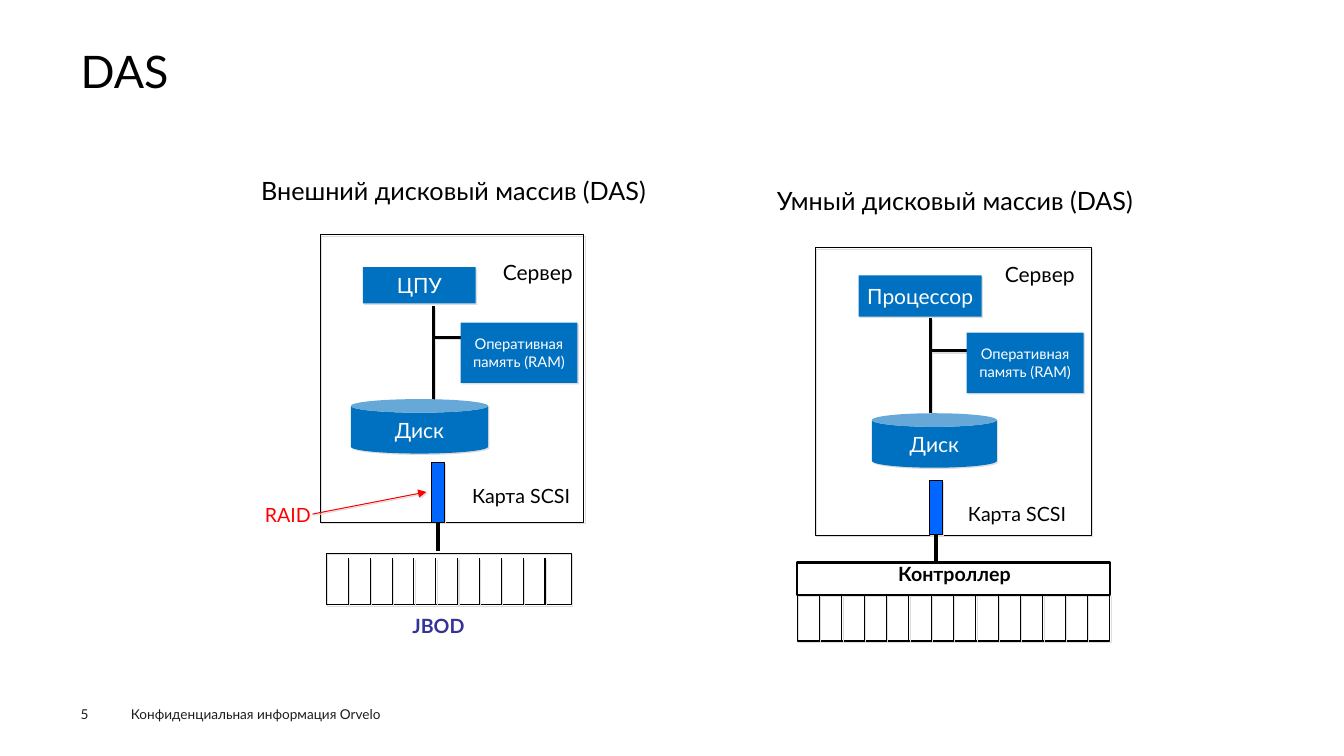
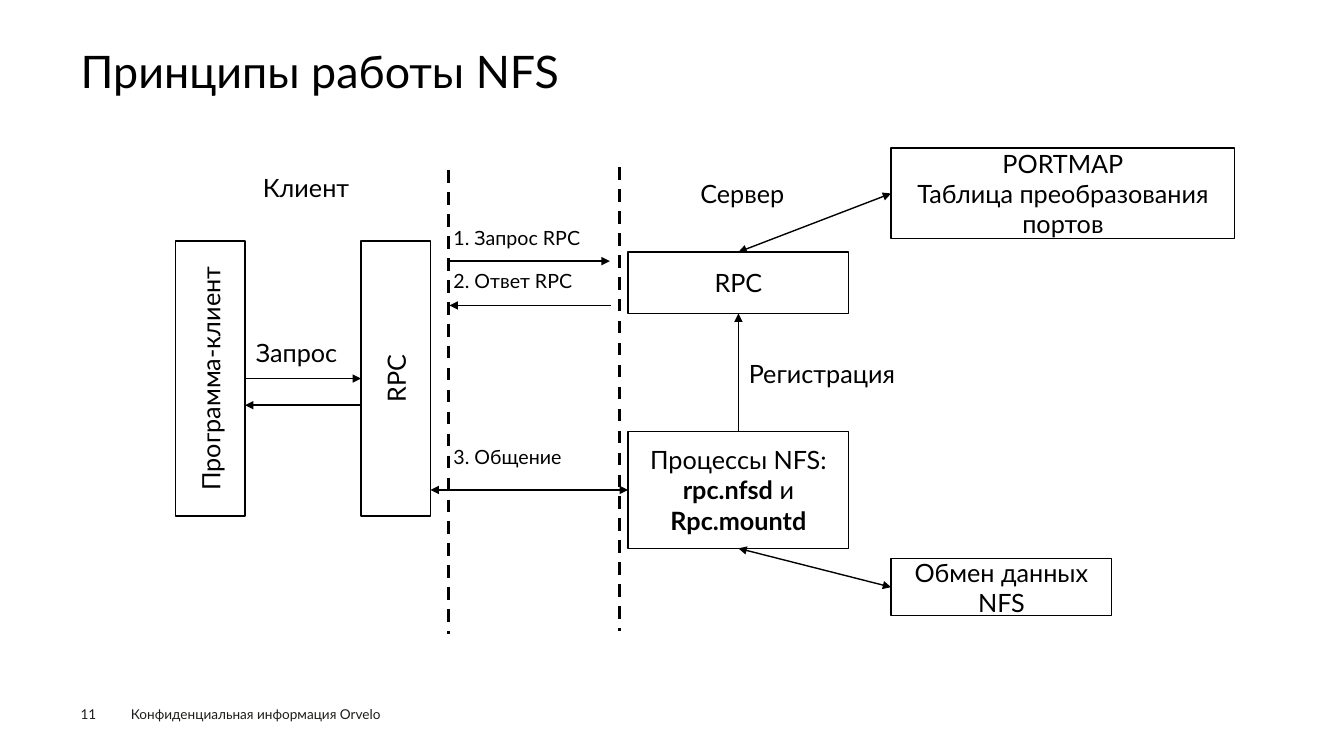
from lxml.etree import SubElement as Sub
from pptx import Presentation
from pptx.dml.color import RGBColor as Rgb
from pptx.enum.dml import MSO_LINE as Dash
from pptx.enum.shapes import MSO_CONNECTOR as Link, MSO_SHAPE as Kind
from pptx.enum.text import MSO_ANCHOR as Anchor, PP_ALIGN as Align
from pptx.oxml.ns import qn
from pptx.util import Pt

BLACK, WHITE, RED = "000000", "FFFFFF", "FF0000"
BLUE, BRIGHT, NAVY = "0070C0", "0066FF", "333399"
INK, GREY = "1D1D1B", "DDDDDD"
TOP, LEFT, BOTTOM, RIGHT = range(4)


def tint(code):
    return Rgb.from_string(code)


def glow(fx):
    cast = Sub(fx, qn("a:outerShdw"), blurRad="0", dist=str(Pt(1.4)),
               dir="2700000", algn="ctr", rotWithShape="0")
    Sub(cast, qn("a:srgbClr"), val=GREY)


def spot(end):
    if hasattr(end[0], "left"):
        box, side = end
        mid_x, mid_y = box.left + box.width // 2, box.top + box.height // 2
        return [(mid_x, box.top), (box.left, mid_y),
                (mid_x, box.top + box.height),
                (box.left + box.width, mid_y)][side]
    return Pt(end[0]), Pt(end[1])


class Deck:
    font = "Lato"
    foot = "Конфиденциальная информация Orvelo"

    def __init__(self):
        self.show = Presentation()
        self.show.slide_width, self.show.slide_height = Pt(960), Pt(540)

    def page(self, title, num, pad, shade):
        self.slide = self.show.slides.add_slide(self.show.slide_layouts[6])
        self.pad, self.shade = pad, shade
        self.label(self.foot, 86.4, 500.4, 237, 18.7, 9.7, INK,
                   pad=(7.2, 3.6), glint=False)
        self.label(num, 57.6, 504, 39.6, 11.5, 9.7, INK, pad=(0, 0),
                   glint=False)
        self.label(title, 57.6, 35.3, 844.6, 38.9, 32, pad=(0, 0),
                   glint=False, space=0.9)

    def letter(self, box, text, size, color, bold=False, align=Align.CENTER,
               anchor=Anchor.MIDDLE, pad=None, space=None, glint=False):
        frame = box.text_frame
        frame.word_wrap = True
        frame.vertical_anchor = anchor
        side, edge = pad or self.pad
        frame.margin_left = frame.margin_right = Pt(side)
        frame.margin_top = frame.margin_bottom = Pt(edge)
        rows = [text] if isinstance(text, str) else text
        for i, row in enumerate(rows):
            para = frame.add_paragraph() if i else frame.paragraphs[0]
            para.alignment = align
            if space:
                para.line_spacing = space
            runs = [(row, bold)] if isinstance(row, str) else row
            for words, heavy in runs:
                run = para.add_run()
                run.text = words
                run.font.size = Pt(size)
                run.font.bold = heavy
                run.font.color.rgb = tint(color)
                if glint:
                    glow(Sub(run.font._element, qn("a:effectLst")))
                run.font.name = self.font

    def label(self, text, x, y, w, h, size, color=BLACK, bold=False,
              align=Align.LEFT, pad=None, space=None, glint=None):
        box = self.slide.shapes.add_textbox(Pt(x), Pt(y), Pt(w), Pt(h))
        self.letter(box, text, size, color, bold, align, Anchor.TOP, pad,
                    space, self.shade if glint is None else glint)

    def center(self, text, mid, y, w, h, size, color=BLACK, bold=False):
        self.label(text, mid - w / 2, y, w, h, size, color, bold,
                   Align.CENTER)

    def box(self, x, y, w, h, text="", size=18, color=BLACK, fill=None,
            line=BLACK, width=1, kind=Kind.RECTANGLE, turn=False, shade=None):
        box = self.slide.shapes.add_shape(kind, Pt(x), Pt(y), Pt(w), Pt(h))
        if fill:
            box.fill.solid()
            box.fill.fore_color.rgb = tint(fill)
        else:
            box.fill.background()
        if line:
            box.line.color.rgb = tint(line)
            box.line.width = Pt(width)
        else:
            box.line.fill.background()
        box.shadow.inherit = False
        if self.shade if shade is None else shade:
            glow(box._element.spPr.find(qn("a:effectLst")))
        if text:
            self.letter(box, text, size, color)
        if turn:
            box.text_frame._txBody.bodyPr.set("vert", "vert270")
        return box

    def block(self, x, y, w, h, text, size=15, kind=Kind.RECTANGLE):
        return self.box(x, y, w, h, text, size, WHITE, BLUE, None, kind=kind)

    def line(self, start, end, width=1, color=BLACK, head=False, tail=False,
             dash=False, shade=None):
        wire = self.slide.shapes.add_connector(
            Link.STRAIGHT, *spot(start), *spot(end))
        for node, join in ((start, wire.begin_connect),
                           (end, wire.end_connect)):
            if hasattr(node[0], "left"):
                join(*node)
        wire.line.color.rgb = tint(color)
        wire.line.width = Pt(width)
        if dash:
            wire.line.dash_style = Dash.DASH
        pen = wire.line._get_or_add_ln()
        for name, used in (("a:headEnd", head), ("a:tailEnd", tail)):
            if used:
                Sub(pen, qn(name), type="triangle")
        fx = Sub(wire._element.spPr, qn("a:effectLst"))
        if self.shade if shade is None else shade:
            glow(fx)

    def server(self, title, mid, y, frame, chip, name, bus, disk, ram, sign,
               card, note, drop):
        self.center(title, mid, y, 310, 28, 18)
        self.box(*frame, width=0.75)
        self.block(*chip, name)
        x, top, fork, low = bus
        self.line((x, top), (x, low), 2)
        self.line((x, fork), (ram[0], fork), 2)
        self.block(*disk, "Диск", kind=Kind.CAN)
        self.block(*ram, 83.5, 43.2, ["Оперативная", "память (RAM)"], 10.5)
        self.center("Сервер", *sign, 70, 24.5, 15)
        slot = self.box(*card, fill=BRIGHT, width=0.75)
        self.line((slot, BOTTOM), (card[0] + card[2] / 2, drop), 2.5,
                  shade=False)
        self.center("Карта SCSI", *note, 100, 23, 14)

    def shelf(self, x, y, w, h, count, step, gap=0):
        self.box(x, y, w, h, width=0.75)
        for i in range(1, count + 1):
            self.line((x + i * step, y + gap), (x + i * step, y + h), 0.75)


def das(deck):
    deck.page("DAS", "5", (2, 2.9), True)
    deck.server("Внешний дисковый массив (DAS)", 324, 122.4,
                (229, 167.8, 188, 205.2), (259.2, 190.8, 80.6, 26), "ЦПУ",
                (309.6, 218.9, 241.2, 285.8), (250.6, 285.1, 98, 38.9),
                (329, 230.4), (384.1, 182.2), (308.2, 330.5, 9.4, 42.5),
                (372.2, 342.7), 393.8)
    deck.center("RAID", 205.6, 356.4, 60, 23, 14, RED)
    deck.line((223.2, 367.2), (304.6, 351.4), 0.75, RED, tail=True)
    deck.shelf(233.3, 395.3, 175, 36.7, 10, 15.6, 3.6)
    deck.center("JBOD", 313.2, 435.6, 60, 23, 14, NAVY, True)

    deck.server("Умный дисковый массив (DAS)", 682.2, 129.6,
                (582.5, 177.1, 197.3, 205.2), (613.4, 196.6, 87.8, 29.5),
                "Процессор", (664.6, 227.5, 250.6, 295.2),
                (622.8, 295.2, 89.3, 38.9), (690.5, 237.6), (742.7, 183.6),
                (663.8, 343.4, 9.4, 38.2), (726.5, 355.7), 401)
    deck.shelf(569.5, 424.8, 223.2, 33.1, 13, 223.2 / 14)
    deck.box(569.5, 401.8, 223.2, 23, width=1.5, shade=False)
    deck.center("Контроллер", 681.8, 398.2, 110, 23, 14, bold=True)


def nfs(deck):
    deck.page("Принципы работы NFS", "11", (7.2, 3.6), False)
    app = deck.box(125.3, 172.1, 49.7, 196.6, "Программа-клиент", turn=True)
    call = deck.box(257.8, 172.1, 49.7, 196.6, "RPC", turn=True)
    host = deck.box(448.6, 180, 157.7, 43.9, "RPC")
    core = deck.box(448.6, 308.2, 157.7, 83.5, [
        "Процессы NFS:",
        [("rpc.nfsd", True), (" и ", False), ("Rpc.mountd", True)]])
    port = deck.box(636.5, 105.8, 245.5, 64.8,
                    ["PORTMAP", "Таблица преобразования портов"])
    data = deck.box(636.5, 398.9, 157.7, 41, "Обмен данных NFS")

    deck.line((port, LEFT), (host, TOP), head=True, tail=True)
    deck.line((core, BOTTOM), (data, LEFT), head=True, tail=True)
    deck.line((core, TOP), (host, BOTTOM), tail=True)
    deck.line((core, LEFT), (307.5, 349.95), head=True, tail=True)
    deck.line((app, RIGHT), (call, LEFT), tail=True)
    deck.line((257.8, 289.4), (175, 289.4), tail=True)
    deck.line((320.4, 186.5), (435.6, 186.5), tail=True)
    deck.line((436.3, 218.2), (321.1, 218.2), tail=True)
    for x, y in ((320.4, 121.7), (442.8, 119.5)):
        deck.line((x, y), (x, y + 331.2), 2.25, dash=True)

    for text, y in (("1. Запрос RPC", 157.7), ("2. Ответ RPC", 188.6),
                    ("3. Общение", 314.6)):
        deck.label(text, 316.8, y, 120, 28.8, 14)
    for text, x, y in (("Клиент", 180.7, 119.5), ("Сервер", 493.2, 123.8),
                       ("Регистрация", 527.8, 252.7),
                       ("Запрос", 175.7, 237.6)):
        deck.label(text, x, y, 130, 28.8, 18)


def main():
    deck = Deck()
    das(deck)
    nfs(deck)
    deck.show.save("out.pptx")


if __name__ == "__main__":
    main()
